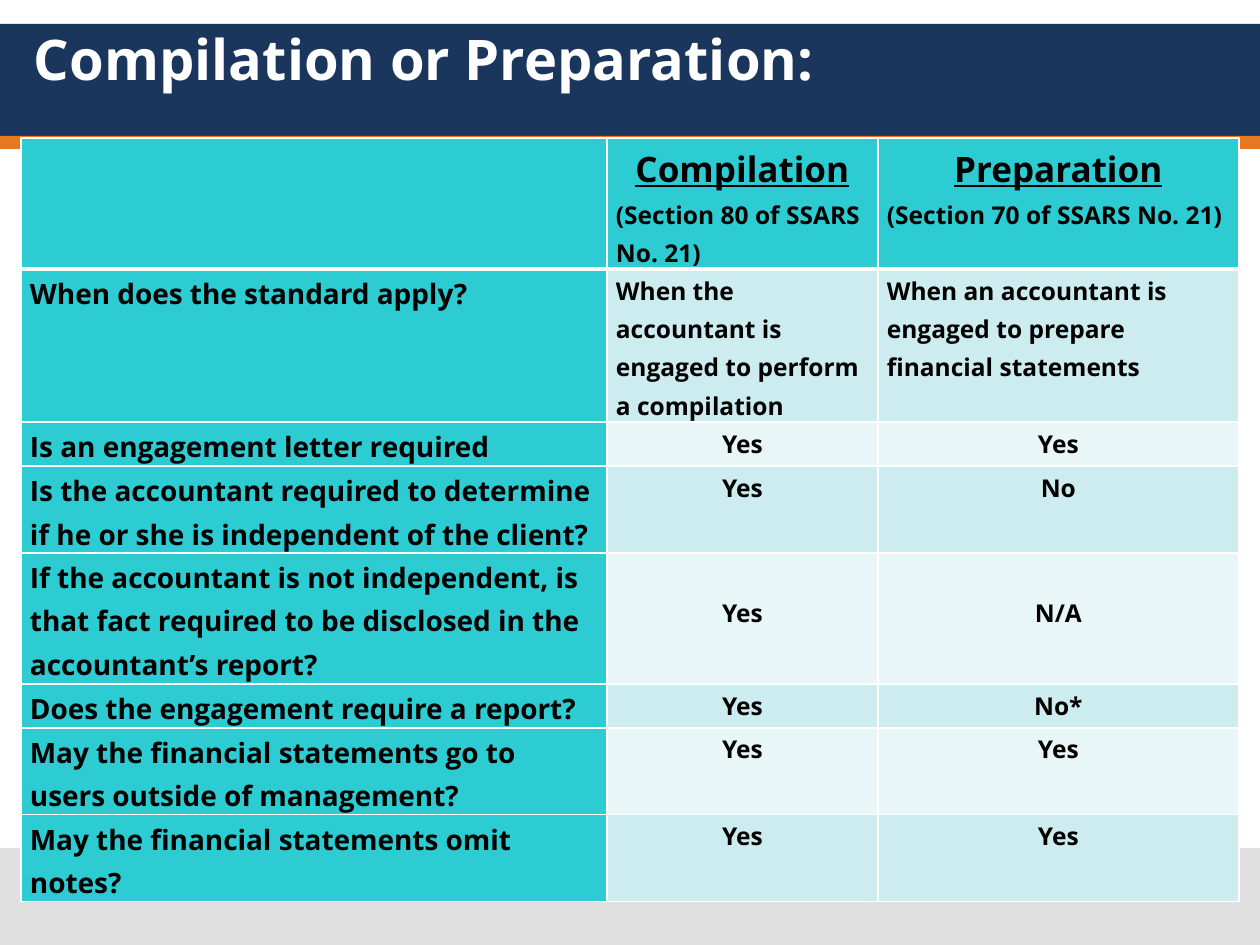
import pptx
import pptx.util
import pptx.dml.color
import pptx.enum.shapes
import pptx.enum.text
import lxml.etree

PX = 914400 // 126
FONT = "Open Sans"
HUES = {"navy": "1B365D", "orange": "E87722", "gray": "E0E0E0", "teal": "2DCCD3",
        "mid": "CDECEF", "pale": "E8F6F7", "white": "FFFFFF", "black": "000000"}
LEFT = pptx.enum.text.PP_ALIGN.LEFT
MID = pptx.enum.text.PP_ALIGN.CENTER


def style(para, size, hue, align=LEFT, under=False):
    para.alignment = align
    font = para.font
    font.name, font.size, font.bold = FONT, pptx.util.Pt(size), True
    font.underline = under
    font.color.rgb = pptx.dml.color.RGBColor.from_string(HUES[hue])


def edge(cell, side, width):
    props = cell._tc.get_or_add_tcPr()
    line = lxml.etree.SubElement(props, pptx.oxml.ns.qn("a:" + side), w=str(width * 12700))
    fill = lxml.etree.SubElement(line, pptx.oxml.ns.qn("a:solidFill"))
    lxml.etree.SubElement(fill, pptx.oxml.ns.qn("a:srgbClr"), val=HUES["white"])


deck = pptx.Presentation()
deck.slide_width, deck.slide_height = 1260 * PX, 945 * PX
slide = deck.slides.add_slide(deck.slide_layouts[6])

# Bands across the slide
for top, high, hue in [(24, 112, "navy"), (136, 13, "orange"), (848, 97, "gray")]:
    band = slide.shapes.add_shape(pptx.enum.shapes.MSO_SHAPE.RECTANGLE,
                                  0, top * PX, 1260 * PX, high * PX)
    band.shadow.inherit = False
    band.fill.solid()
    band.fill.fore_color.rgb = pptx.dml.color.RGBColor.from_string(HUES[hue])
    band.line.fill.background()

# Title
title = slide.shapes.add_textbox(21 * PX, 25 * PX, 1218 * PX, 76 * PX)
frame = title.text_frame
frame.word_wrap = True
frame.margin_left = frame.margin_right = 13 * PX
frame.margin_top = frame.margin_bottom = 0
frame.text = "Compilation or Preparation:"
style(frame.paragraphs[0], 32, "white")

# Table text
rows = [
    ("", "Compilation\n(Section 80 of SSARS No. 21)", "Preparation\n(Section 70 of SSARS No. 21)"),
    ("When does the standard apply?", "When the accountant is engaged to perform a compilation",
     "When an accountant is engaged to prepare financial statements"),
    ("Is an engagement letter required", "Yes", "Yes"),
    ("Is the accountant required to determine if he or she is independent of the client?",
     "Yes", "No"),
    ("If the accountant is not independent, is that fact required to be disclosed "
     "in the accountant’s report?", "Yes", "N/A"),
    ("Does the engagement require a report?", "Yes", "No*"),
    ("May the financial statements go to users outside of management?", "Yes", "Yes"),
    ("May the financial statements omit notes?", "Yes", "Yes"),
]
wides = [586, 271, 361]
highs = [131, 153, 44, 87, 131, 44, 87, 87]
LOW = 4  # row whose answers sit one line lower

table = slide.shapes.add_table(len(rows), len(wides), 21 * PX, 138 * PX,
                               sum(wides) * PX, sum(highs) * PX).table
table.first_row = table.horz_banding = False
for col, wide in zip(table.columns, wides):
    col.width = wide * PX

# Cells
for r, texts in enumerate(rows):
    table.rows[r].height = highs[r] * PX
    for c, text in enumerate(texts):
        cell = table.cell(r, c)
        cell.margin_left = cell.margin_right = 9 * PX
        cell.margin_top = 38 * PX if r == LOW and c else 0
        cell.margin_bottom = 0
        for side in ("lnL", "lnR", "lnT", "lnB"):
            thick = (r, side) in [(0, "lnB"), (1, "lnT")]
            edge(cell, side, 3 if thick else 1)
        hue = "teal" if r == 0 or c == 0 else "mid" if r % 2 else "pale"
        cell.fill.solid()
        cell.fill.fore_color.rgb = pptx.dml.color.RGBColor.from_string(HUES[hue])
        cell.text = text
        for n, para in enumerate(cell.text_frame.paragraphs):
            para.line_spacing = 1.15
            head = r == 0 and n == 0
            size = 20 if head else 14 if c else 16
            center = c and (head or r > 1)
            style(para, size, "black", MID if center else LEFT, head)

deck.save("out.pptx")
